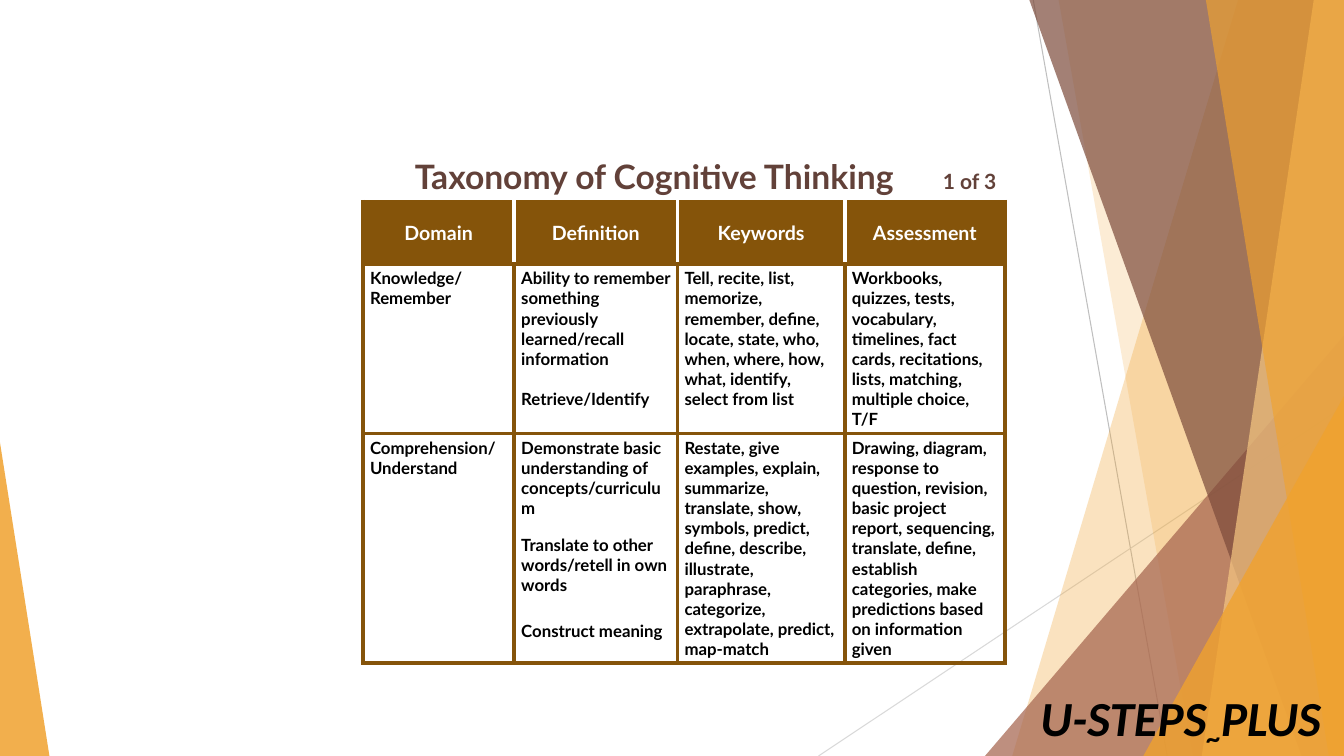
from lxml.etree import SubElement
from pptx import Presentation
from pptx.dml.color import RGBColor
from pptx.enum.shapes import MSO_CONNECTOR, MSO_SHAPE
from pptx.enum.text import MSO_ANCHOR, MSO_AUTO_SIZE, PP_ALIGN
from pptx.oxml.ns import qn
from pptx.util import Inches, Pt

AMBER, BROWN, WHITE, BLACK = "F0A22E", "85540A", "FFFFFF", "000000"

HEADINGS = ["Domain", "Definition", "Keywords", "Assessment"]
LEVELS = [
    [
        [("Knowledge/", 0, 0), ("Remember", 0, 0)],
        [("Ability to remember something previously learned/recall information", 0, 0),
         ("Retrieve/Identify", 14.4, 0)],
        [("Tell, recite, list, memorize, remember, define, locate, state, who, when, "
          "where, how, what, identify, select from list", 0, 0)],
        [("Workbooks, quizzes, tests, vocabulary, timelines, fact cards, recitations, "
          "lists, matching, multiple choice, T/F", 0, 0)],
    ],
    [
        [("Comprehension/", 0, 0), ("Understand", 0, 0)],
        [("Demonstrate basic understanding of concepts/curriculum", 0, 0),
         ("Translate to other words/retell in own words", 12, 6),
         ("Construct meaning", 12, 6)],
        [("Restate, give examples, explain, summarize, translate, show, symbols, predict, "
          "define, describe, illustrate, paraphrase, categorize, extrapolate, predict, "
          "map-match", 0, 0)],
        [("Drawing, diagram, response to question, revision, basic project report, "
          "sequencing, translate, define, establish categories, make predictions based "
          "on information given", 0, 0)],
    ],
]


def color(value):
    return RGBColor.from_string(value)


class SlideBuilder:
    font = "Lato"

    def __init__(self, deck):
        self.deck = deck
        self.page = deck.slides.add_slide(deck.slide_layouts[5])

    def across(self, percent):
        return round(self.deck.slide_width * percent / 100)

    def down(self, percent):
        return round(self.deck.slide_height * percent / 100)

    def area(self, left, top, width, height):
        return self.across(left), self.down(top), self.across(width), self.down(height)

    def style_text(self, para, size, fill, font=None, italic=False):
        para.font.name = font or self.font
        para.font.size = Pt(size)
        para.font.bold = True
        para.font.italic = italic
        para.font.color.rgb = color(fill)

    def paint(self, shape, fill, opacity):
        shape.shadow.inherit = False
        shape.line.fill.background()
        shape.fill.solid()
        shape.fill.fore_color.rgb = color(fill)
        tint = next(shape.element.spPr.iter(qn("a:srgbClr")))
        SubElement(tint, qn("a:alpha"), val=str(opacity * 1000))

    def line(self, start, end, stroke):
        line = self.page.shapes.add_connector(
            MSO_CONNECTOR.STRAIGHT, self.across(start[0]), self.down(start[1]),
            self.across(end[0]), self.down(end[1]))
        line.line.color.rgb = color(stroke)
        line.line.width = Pt(0.75)
        SubElement(line.element.spPr, qn("a:effectLst"))

    def ribbon(self, top, bottom, fill, opacity):
        right, base = self.across(100), self.down(100)
        outline = self.page.shapes.build_freeform(self.across(top), 0)
        outline.add_line_segments([(right, 0), (right, base), (self.across(bottom), base)])
        self.paint(outline.convert_to_shape(), fill, opacity)

    def triangle(self, left, top, width, apex, fill, opacity):
        shape = self.page.shapes.add_shape(
            MSO_SHAPE.ISOSCELES_TRIANGLE, *self.area(left, top, width, 100 - top))
        shape.adjustments[0] = apex
        self.paint(shape, fill, opacity)

    def title(self, text, counter, area, tab):
        box = self.page.shapes.title
        box.left, box.top, box.width, box.height = self.area(*area)
        frame = box.text_frame
        frame.word_wrap = False
        frame.auto_size = MSO_AUTO_SIZE.NONE
        frame.vertical_anchor = MSO_ANCHOR.TOP
        frame.margin_left = self.across(1)
        para = frame.paragraphs[0]
        para.alignment = PP_ALIGN.LEFT
        self.style_text(para, 24, "624139")
        for words, size in ((text + "\t", 24), (counter, 15)):
            span = para.add_run()
            span.text = words
            span.font.size = Pt(size)
        properties = para._p.get_or_add_pPr()
        stops = properties.makeelement(qn("a:tabLst"))
        SubElement(stops, qn("a:tab"), pos=str(self.across(tab)), algn="l")
        properties.insert(0, stops)

    def signature(self, parts, area):
        box = self.page.shapes.add_textbox(*self.area(*area))
        box.text_frame.word_wrap = False
        para = box.text_frame.paragraphs[0]
        self.style_text(para, 35, BLACK, "Calibri", True)
        for words, baseline in parts:
            span = para.add_run()
            span.text = words
            span._r.get_or_add_rPr().set("baseline", str(baseline * 1000))

    def borders(self, cell, strokes):
        properties = cell._tc.get_or_add_tcPr()
        for side, stroke in zip("LRTB", strokes):
            edge = SubElement(properties, qn(f"a:ln{side}"), w=str(Pt(3)))
            SubElement(SubElement(edge, qn("a:solidFill")), qn("a:srgbClr"), val=stroke)

    def cell(self, cell, paragraphs, strokes, header):
        self.borders(cell, strokes)
        cell.margin_left = cell.margin_right = Inches(0.07)
        cell.margin_top = cell.margin_bottom = Inches(0.04)
        cell.vertical_anchor = MSO_ANCHOR.MIDDLE if header else MSO_ANCHOR.TOP
        if header:
            cell.fill.solid()
            cell.fill.fore_color.rgb = color(BROWN)
        else:
            cell.fill.background()
        cell.text = "\n".join(words for words, before, after in paragraphs)
        for para, (words, before, after) in zip(cell.text_frame.paragraphs, paragraphs):
            para.alignment = PP_ALIGN.CENTER if header else PP_ALIGN.LEFT
            para.space_before, para.space_after = Pt(before), Pt(after)
            self.style_text(para, 14 if header else 12, WHITE if header else BLACK)

    def table(self, rows, left, top, widths, heights):
        table = self.page.shapes.add_table(
            len(heights), len(widths),
            *self.area(left, top, sum(widths), sum(heights))).table
        table.horz_banding = False
        for column, width in zip(table.columns, widths):
            column.width = self.across(width)
        for row, height in zip(table.rows, heights):
            row.height = self.down(height)
        last = len(widths) - 1
        for r, row in enumerate(rows):
            header = r == 0
            inner = WHITE if header else BROWN
            for c, paragraphs in enumerate(row):
                strokes = [inner if c > 0 else BROWN, inner if c < last else BROWN,
                           BROWN, BROWN]
                self.cell(table.cell(r, c), paragraphs, strokes, header)


def main():
    deck = Presentation()
    deck.slide_width, deck.slide_height = Inches(13.33), Inches(7.5)
    slide = SlideBuilder(deck)

    slide.line((76.88, 0), (86.85, 100), "BFBFBF")
    slide.line((100, 53.73), (60.9, 100), "D9D9D9")
    slide.ribbon(92.12, 75.32, AMBER, 30)
    slide.ribbon(78.77, 88.75, AMBER, 20)
    slide.triangle(73.29, 44.4, 26.71, 1, "A5644E", 72)
    slide.ribbon(76.59, 96.85, "7C4B3B", 70)
    slide.ribbon(97.75, 89.42, "F6C782", 70)
    slide.ribbon(89.72, 98.87, AMBER, 65)
    slide.triangle(85.07, 52.4, 14.93, 1, AMBER, 80)
    slide.triangle(0, 58.53, 3.68, 0, AMBER, 85)

    slide.title("Taxonomy of Cognitive Thinking", "1 of 3", (29.86, 20, 45.5, 6.67), 39.3)
    headings = [[(heading, 0, 0)] for heading in HEADINGS]
    slide.table([headings] + LEVELS, 27.01, 26.67,
                [11.25, 12.15, 12.45, 11.93], [8.27, 22.27, 30.27])
    slide.signature([("U-STEPS", 0), ("~", -25), ("PLUS", 0)], (76.67, 90.27, 23.33, 9.2))

    deck.save("out.pptx")


if __name__ == "__main__":
    main()
